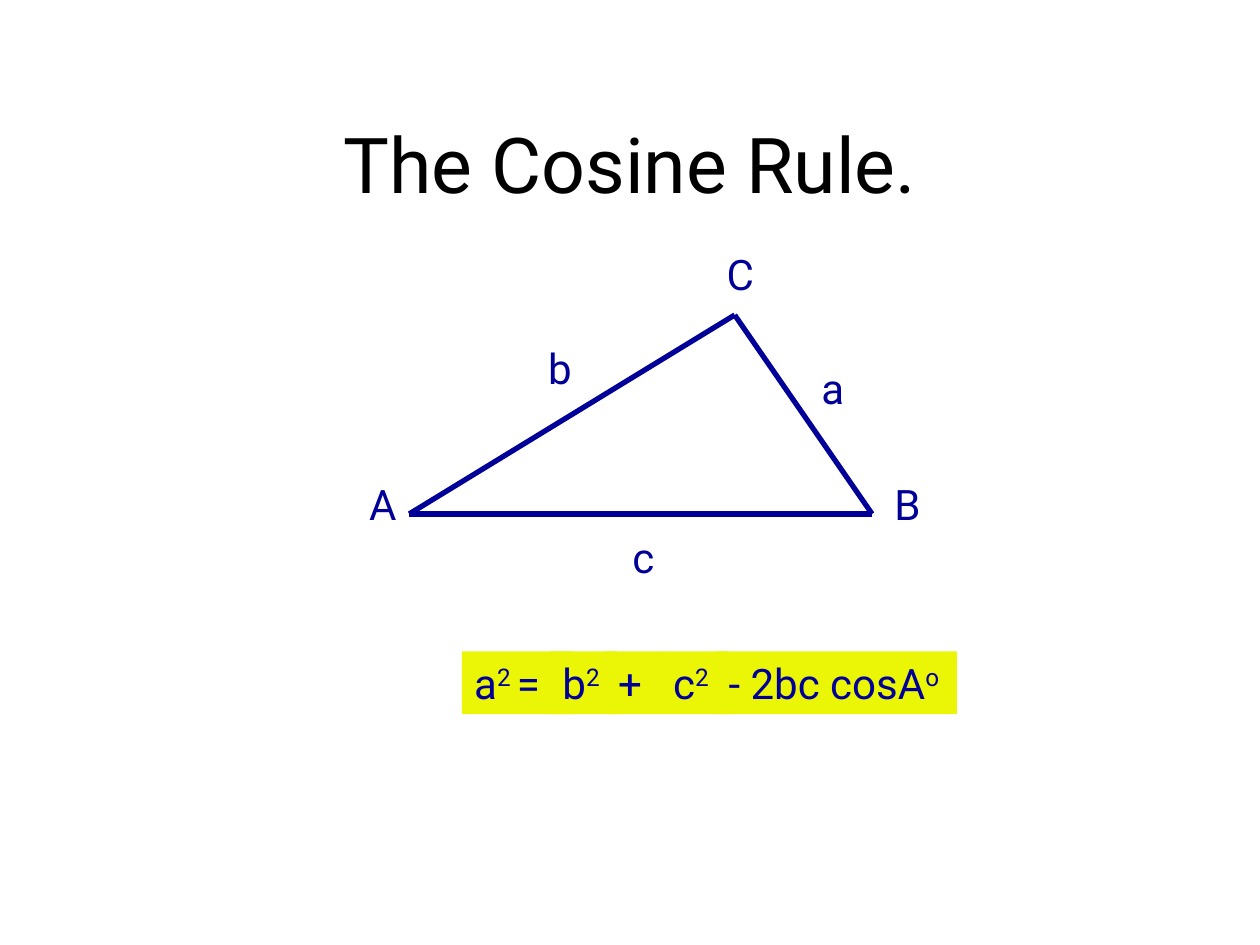
from collections import namedtuple
from dataclasses import dataclass

from lxml import etree
from pptx import Presentation
from pptx.dml.color import RGBColor
from pptx.enum.shapes import MSO_CONNECTOR, MSO_SHAPE
from pptx.enum.text import MSO_ANCHOR, PP_ALIGN
from pptx.oxml.ns import qn
from pptx.util import Cm, Pt

STRAIGHT = MSO_CONNECTOR.STRAIGHT
RECTANGLE = MSO_SHAPE.RECTANGLE
MIDDLE, TOP = MSO_ANCHOR.MIDDLE, MSO_ANCHOR.TOP
CENTER, LEFT = PP_ALIGN.CENTER, PP_ALIGN.LEFT

Box = namedtuple("Box", "left top width height")


@dataclass(frozen=True)
class Theme:
    font: str = "Roboto"
    black: RGBColor = RGBColor(0, 0, 0)
    navy: RGBColor = RGBColor(0x00, 0x00, 0x99)
    yellow: RGBColor = RGBColor(0xEB, 0xF6, 0x06)
    title_size: int = 44
    body_size: int = 24
    side_width: int = 3
    row_height: float = 1.27


THEME = Theme()


def style_font(font, size, color):
    font.name = THEME.font
    font.size = Pt(size)
    font.color.rgb = color


def add_title(page, box, text):
    title = page.shapes.add_textbox(*map(Cm, box))
    frame = title.text_frame
    frame.word_wrap = True
    frame.vertical_anchor = MIDDLE
    frame.text = text
    para = frame.paragraphs[0]
    para.alignment = CENTER
    style_font(para.runs[0].font, THEME.title_size, THEME.black)


def add_side(group, start, end):
    side = group.shapes.add_connector(STRAIGHT, *map(Cm, start + end))
    side.line.color.rgb = THEME.navy
    side.line.width = Pt(THEME.side_width)
    etree.SubElement(side._element.spPr, qn("a:effectLst"))


def add_triangle(page, box):
    """Draw triangle ABC with its corner and side letters."""
    group = page.shapes.add_group_shape()
    corners = {"A": (1.06, 5.48), "B": (10.39, 5.48), "C": (7.62, 1.47)}
    points = {name: (box.left + x, box.top + y) for name, (x, y) in corners.items()}
    for start, end in ("AB", "AC", "CB"):
        add_side(group, points[start], points[end])

    letters = [
        ("A", 0, 4.65), ("B", 10.59, 4.65), ("C", 7.21, 0),
        ("a", 9.12, 2.31), ("b", 3.61, 1.9), ("c", 5.31, 5.7),
    ]
    for letter, x, y in letters:
        label = group.shapes.add_textbox(
            Cm(box.left + x), Cm(box.top + y), Cm(1.5), Cm(THEME.row_height))
        label.text_frame.word_wrap = True
        label.text_frame.text = letter
        style_font(label.text_frame.paragraphs[0].runs[0].font,
                   THEME.body_size, THEME.navy)


def add_term(group, box, parts):
    """Add one highlighted term; every second part is superscript."""
    term = group.shapes.add_shape(RECTANGLE, *map(Cm, box))
    term.shadow.inherit = False
    term.fill.solid()
    term.fill.fore_color.rgb = THEME.yellow
    term.line.fill.background()
    frame = term.text_frame
    frame.word_wrap = False
    frame.vertical_anchor = TOP
    para = frame.paragraphs[0]
    para.alignment = LEFT
    for index, part in enumerate(parts):
        span = para.add_run()
        span.text = part
        style_font(span.font, THEME.body_size, THEME.navy)
        if index % 2:
            span.font._element.set("baseline", "30000")


def add_formula(page, box):
    group = page.shapes.add_group_shape()
    terms = [
        (0, 2.24, ["a", "2 ", "="]),
        (1.78, 1.35, ["b", "2"]),
        (2.9, 1.12, ["+"]),
        (4.01, 1.35, ["c", "2"]),
        (5.13, box.width - 5.13, ["- 2bc cosA", "o"]),
    ]
    for x, width, parts in terms:
        add_term(group, Box(box.left + x, box.top, width, box.height), parts)


def main():
    deck = Presentation()
    deck.slide_width, deck.slide_height = Cm(25.4), Cm(19.05)
    page = deck.slides.add_slide(deck.slide_layouts[6])
    add_title(page, Box(1.9, 1.7, 21.6, 3.18), "The Cosine Rule.")
    add_triangle(page, Box(7.19, 4.88, 12.09, 6.97))
    add_formula(page, Box(9.31, 13.13, 9.98, THEME.row_height))
    deck.save("out.pptx")


if __name__ == "__main__":
    main()
